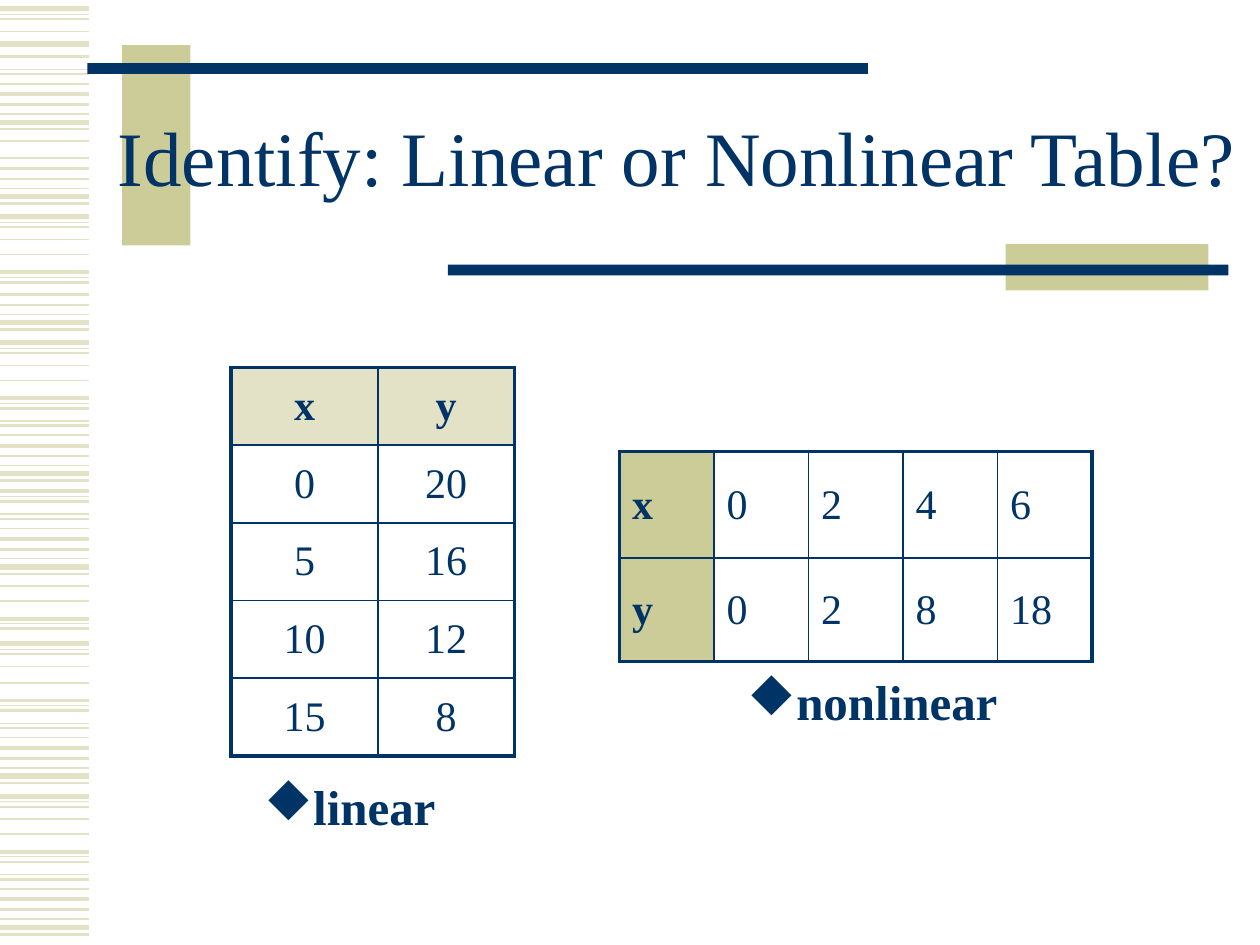
from lxml.etree import SubElement
from pptx import Presentation
from pptx.dml.color import RGBColor
from pptx.enum.shapes import MSO_CONNECTOR, MSO_SHAPE
from pptx.enum.text import MSO_ANCHOR, PP_ALIGN
from pptx.oxml.ns import qn
from pptx.util import Pt

COLORS = {"navy": "003366", "olive": "CCCC99", "pale": "E3E2C7"}
FONT = "Times New Roman"
BULLET_FONT, DIAMOND = "Wingdings", "u"  # the letter u is a diamond in Wingdings
THICK, THIN = 2.25, 1

# Stripe motifs: (offset, line width)
HEAD = [(0, 3), (3.2, 0.75), (6, 1), (13, 1)]
TAIL = [(0, 2.25), (2.9, 0.75), (5.8, 1.5), (13, 0.75), (15.8, 1.5)]
RISE = [(-22, 1), (-16, 2.25), (-10, 1.5), (-4.7, 0.75), (0, 3), (4, 1.5)]
STRIPES = [
    (HEAD, [5, 123.8, 195.8, 367.9, 455]),
    (TAIL, [227.5, 280.8, 400.3, 486.7]),
    (TAIL[:3], [155.5, 353.5]),
    (TAIL[2:], [26.6]),
    (RISE, [69.8, 112.3, 270.7, 324, 443.5, 529.9]),
    (RISE[1:], [184.3]),
    ([(0, 1)], [80.6, 145.4, 217.4, 334.8, 343.4, 390.2, 476.6]),
    ([(0, 3)], [25.2]),
]


class SlideBuilder:
    def __init__(self, slide):
        self.slide = slide

    def color(self, name):
        return RGBColor.from_string(COLORS[name])

    def style(self, paragraph, size, bold=False):
        font = paragraph.font
        font.name, font.size, font.bold = FONT, Pt(size), bold
        font.color.rgb = self.color("navy")

    def stripe(self, y, weight):
        line = self.slide.shapes.add_connector(
            MSO_CONNECTOR.STRAIGHT, Pt(0), Pt(y), Pt(51), Pt(y))
        line.line.color.rgb = self.color("pale")
        line.line.width = Pt(weight)
        SubElement(line._element.spPr, qn("a:effectLst"))

    def bar(self, left, top, width, height, color):
        shape = self.slide.shapes.add_shape(
            MSO_SHAPE.RECTANGLE, Pt(left), Pt(top), Pt(width), Pt(height))
        shape.shadow.inherit = False
        shape.fill.solid()
        shape.fill.fore_color.rgb = self.color(color)
        shape.line.fill.background()

    def text_box(self, left, top, width, height, text, line_spacing):
        box = self.slide.shapes.add_textbox(
            Pt(left), Pt(top), Pt(width), Pt(height))
        box.text_frame.word_wrap = True
        paragraph = box.text_frame.paragraphs[0]
        paragraph.text = text
        paragraph.line_spacing = line_spacing
        return box.text_frame, paragraph

    def title(self, text):
        frame, paragraph = self.text_box(54, 48, 666, 90, text, 0.85)
        frame.vertical_anchor = MSO_ANCHOR.MIDDLE
        paragraph.alignment = PP_ALIGN.CENTER
        self.style(paragraph, 44)

    def bullet(self, left, top, width, text):
        _, paragraph = self.text_box(left, top, width, 30, text, 0.9)
        paragraph.space_before = Pt(5.6)
        properties = paragraph._p.get_or_add_pPr()
        properties.set("marL", str(Pt(27)))
        properties.set("indent", str(-Pt(27)))
        bullet_color = SubElement(properties, qn("a:buClr"))
        SubElement(bullet_color, qn("a:srgbClr"), val=COLORS["navy"])
        SubElement(properties, qn("a:buFont"), typeface=BULLET_FONT,
                   pitchFamily="2", charset="2")
        SubElement(properties, qn("a:buChar"), char=DIAMOND)
        self.style(paragraph, 28, bold=True)

    def borders(self, cell, outer_sides):
        """Draw thick lines on the sides at the table's edge, thin ones elsewhere."""
        properties = cell._tc.get_or_add_tcPr()
        for side in "LRTB":
            weight = THICK if side in outer_sides else THIN
            line = SubElement(properties, qn(f"a:ln{side}"), w=str(Pt(weight)))
            fill = SubElement(line, qn("a:solidFill"))
            SubElement(fill, qn("a:srgbClr"), val=COLORS["navy"])

    def table(self, left, top, widths, heights, rows, is_header, header_color, alignment):
        table = self.slide.shapes.add_table(
            len(heights), len(widths), Pt(left), Pt(top),
            Pt(sum(widths)), Pt(sum(heights))).table
        table.first_row = table.horz_banding = False
        for column, width in zip(table.columns, widths):
            column.width = Pt(width)
        for row, height in zip(table.rows, heights):
            row.height = Pt(height)
        last_row, last_column = len(heights) - 1, len(widths) - 1
        for r, values in enumerate(rows):
            for c, value in enumerate(values):
                cell = table.cell(r, c)
                edges = {"L": c == 0, "R": c == last_column,
                         "T": r == 0, "B": r == last_row}
                self.borders(cell, [side for side, outer in edges.items() if outer])
                header = is_header(r, c)
                if header:
                    cell.fill.solid()
                    cell.fill.fore_color.rgb = self.color(header_color)
                else:
                    cell.fill.background()
                cell.vertical_anchor = MSO_ANCHOR.MIDDLE
                paragraph = cell.text_frame.paragraphs[0]
                paragraph.text = value
                paragraph.alignment = alignment
                paragraph.space_before = Pt(4.8)
                self.style(paragraph, 24, bold=header)


def main():
    presentation = Presentation()
    presentation.slide_width, presentation.slide_height = Pt(720), Pt(540)
    builder = SlideBuilder(
        presentation.slides.add_slide(presentation.slide_layouts[6]))

    for motif, starts in STRIPES:
        for start in starts:
            for offset, weight in motif:
                builder.stripe(start + offset, weight)

    builder.bar(69.8, 25.8, 39, 114.4, "olive")
    builder.bar(50, 36, 446, 6.2, "navy")
    builder.bar(574.6, 139.5, 116, 26.5, "olive")
    builder.bar(256, 151.2, 446, 6.2, "navy")
    builder.title("Identify: Linear or Nonlinear Table?")

    builder.table(
        132, 210, [84, 78], [44.4] * 5,
        [["x", "y"], ["0", "20"], ["5", "16"], ["10", "12"], ["15", "8"]],
        lambda row, column: row == 0, "pale", PP_ALIGN.CENTER)
    builder.table(
        354, 258, [54] * 5, [61, 59],
        [["x", "0", "2", "4", "6"], ["y", "0", "2", "8", "18"]],
        lambda row, column: column == 0, "olive", PP_ALIGN.LEFT)

    builder.bullet(144, 444, 114, "linear")
    builder.bullet(420, 384, 162, "nonlinear")
    presentation.save("out.pptx")


if __name__ == "__main__":
    main()
